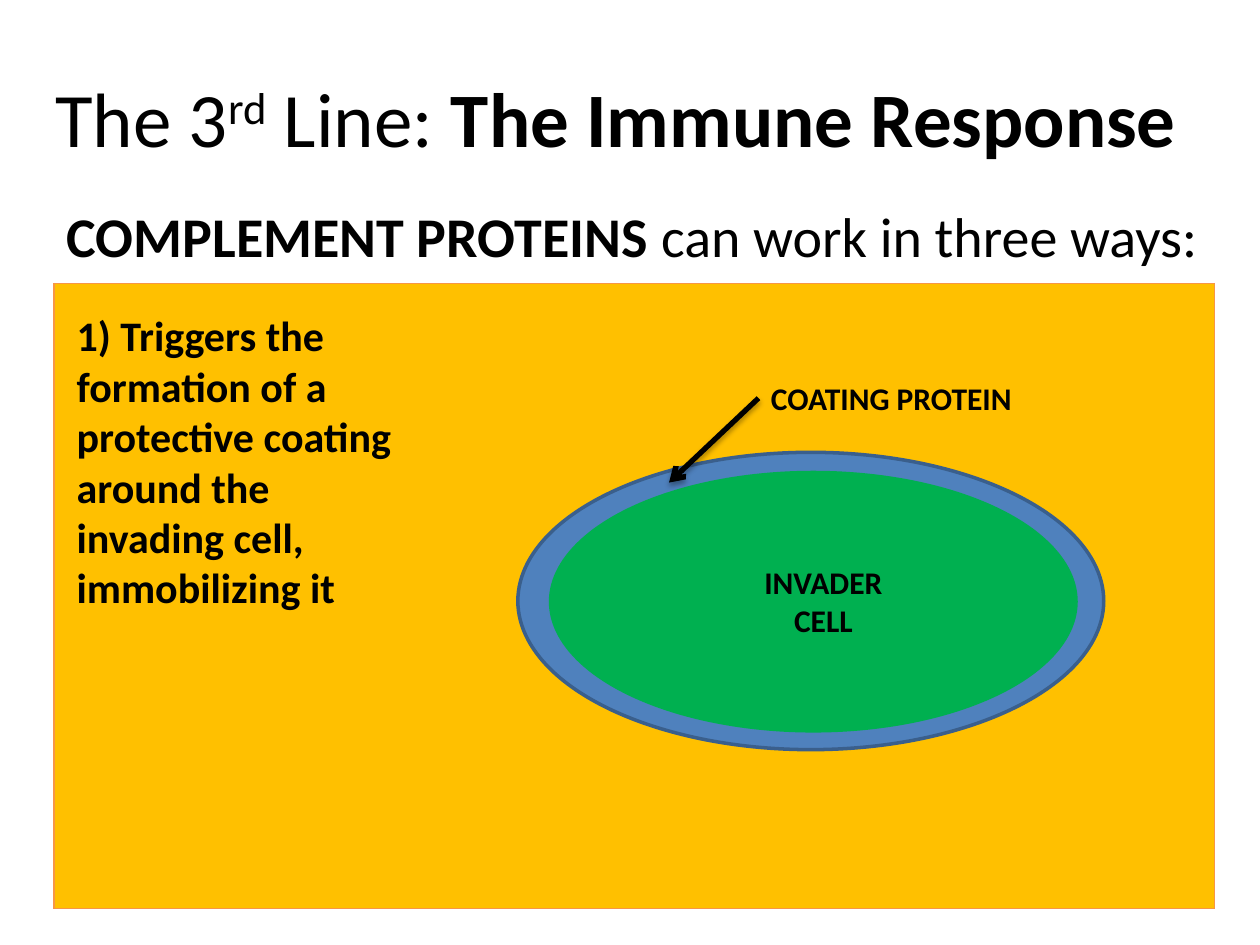
from lxml import etree
from pptx import Presentation
from pptx.dml.color import RGBColor
from pptx.enum.shapes import MSO_CONNECTOR as CONNECTOR, MSO_SHAPE as SHAPE
from pptx.enum.text import MSO_ANCHOR as ANCHOR, PP_ALIGN as ALIGN
from pptx.oxml import parse_xml
from pptx.oxml.ns import nsdecls, qn
from pptx.util import Inches, Pt

BLACK = RGBColor(0x00, 0x00, 0x00)
AMBER = RGBColor(0xFF, 0xC0, 0x00)
ORANGE = RGBColor(0xF7, 0x96, 0x46)
BLUE = RGBColor(0x4F, 0x81, 0xBD)
DARK_BLUE = RGBColor(0x3A, 0x5F, 0x8C)
GREEN = RGBColor(0x00, 0xB0, 0x50)


def write_text(shape, *lines, size, align=ALIGN.LEFT, anchor=ANCHOR.TOP, space_before=0):
    frame = shape.text_frame
    frame.word_wrap = True
    frame.vertical_anchor = anchor
    for index, line in enumerate(lines):
        paragraph = frame.add_paragraph() if index else frame.paragraphs[0]
        paragraph.alignment = align
        paragraph.space_before = Pt(space_before)
        for text, style in line:
            run = paragraph.add_run()
            run.text = text
            run.font.name = "Calibri"
            run.font.size = Pt(size)
            run.font.bold = style == "bold"
            run.font.color.rgb = BLACK
            if style == "superscript":
                run.font._element.set("baseline", "30000")


def add_filled_shape(kind, left, top, width, height, fill, line, line_width):
    shape = slide.shapes.add_shape(
        kind, Inches(left), Inches(top), Inches(width), Inches(height))
    shape.shadow.inherit = False
    shape.fill.solid()
    shape.fill.fore_color.rgb = fill
    shape.line.color.rgb = line
    shape.line.width = Pt(line_width)
    return shape


presentation = Presentation()
presentation.slide_width = Inches(10)
presentation.slide_height = Inches(7.5)
slide = presentation.slides.add_slide(presentation.slide_layouts[6])

title = slide.shapes.add_textbox(Inches(0.28), Inches(0.3), Inches(9.22), Inches(1.25))
write_text(title, [("The 3", "regular"), ("rd", "superscript"), (" Line: ", "regular"),
                   ("The Immune Response", "bold")],
           size=44, align=ALIGN.CENTER, anchor=ANCHOR.MIDDLE)

body = slide.shapes.add_textbox(Inches(0.43), Inches(1.55), Inches(9.37), Inches(4.95))
write_text(body, [("COMPLEMENT PROTEINS ", "bold"), ("can work in three ways:", "regular")],
           size=32, space_before=6.4)

table = slide.shapes.add_table(
    1, 1, Inches(0.43), Inches(2.25), Inches(9.21), Inches(4.96)).table
table.first_row = False
table.horz_banding = False
cell = table.cell(0, 0)
cell.fill.solid()
cell.fill.fore_color.rgb = AMBER
cell_properties = cell._tc.get_or_add_tcPr()
for index, side in enumerate(("lnL", "lnR", "lnT", "lnB")):
    cell_properties.insert(index, parse_xml(
        f'<a:{side} {nsdecls("a")} w="{Pt(1)}"><a:solidFill>'
        f'<a:srgbClr val="{ORANGE}"/></a:solidFill></a:{side}>'))

explanation = slide.shapes.add_textbox(
    Inches(0.51), Inches(2.41), Inches(2.91), Inches(2.52))
write_text(explanation, [("1) Triggers the formation of a protective coating around "
                          "the invading cell, immobilizing it", "bold")], size=24)

coating_label = slide.shapes.add_textbox(
    Inches(6.02), Inches(2.96), Inches(2.52), Inches(0.4))
write_text(coating_label, [("COATING PROTEIN", "bold")], size=18)

add_filled_shape(SHAPE.OVAL, 4.11, 3.59, 4.65, 2.36, BLUE, DARK_BLUE, 2)
add_filled_shape(SHAPE.OVAL, 4.37, 3.75, 4.17, 2.05, GREEN, GREEN, 2)
cell_label = add_filled_shape(SHAPE.RECTANGLE, 5.55, 4.42, 1.97, 0.71, GREEN, GREEN, 0.75)
write_text(cell_label, [("INVADER", "bold")], [("CELL", "bold")],
           size=18, align=ALIGN.CENTER)

arrow = slide.shapes.add_connector(
    CONNECTOR.STRAIGHT, Inches(6.02), Inches(3.16), Inches(5.31), Inches(3.83))
arrow.begin_connect(coating_label, 1)
arrow.line.color.rgb = BLACK
arrow.line.width = Pt(3)
etree.SubElement(arrow.line._get_or_add_ln(), qn("a:tailEnd"), type="arrow")
arrow._element.spPr.append(parse_xml(
    f'<a:effectLst {nsdecls("a")}><a:outerShdw blurRad="{Pt(3.1)}" dist="{Pt(1.8)}" '
    f'dir="5400000" rotWithShape="0"><a:srgbClr val="{BLACK}"><a:alpha val="35000"/>'
    '</a:srgbClr></a:outerShdw></a:effectLst>'))

presentation.save("out.pptx")
